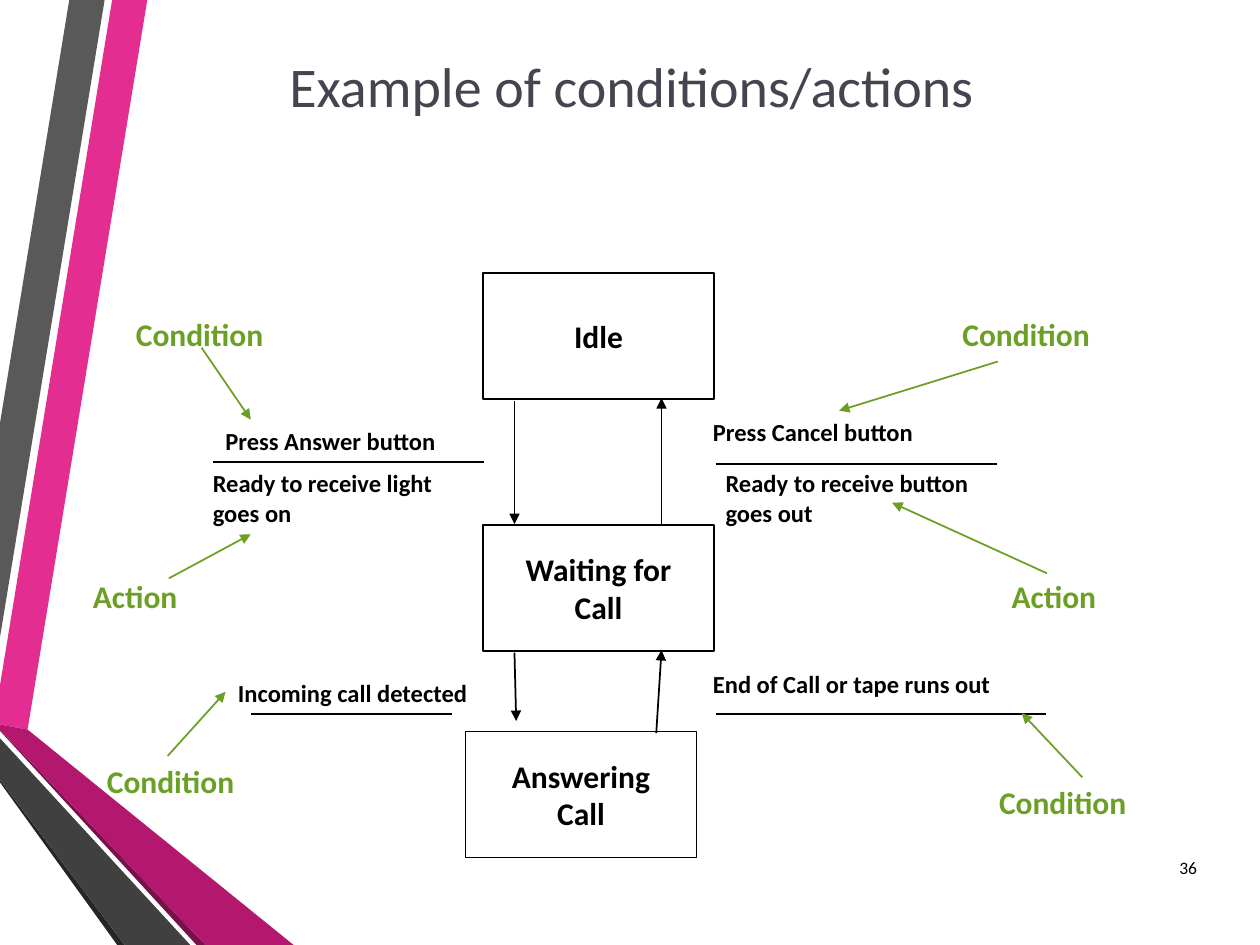
import pptx
import pptx.dml.color
import pptx.enum.shapes
import pptx.enum.text
import pptx.oxml
import pptx.oxml.ns
import pptx.util
from dataclasses import dataclass

Pt = pptx.util.Pt
ALIGN = pptx.enum.text.PP_ALIGN
ANCHOR = pptx.enum.text.MSO_ANCHOR
AUTO_SIZE = pptx.enum.text.MSO_AUTO_SIZE


@dataclass(frozen=True)
class Theme:
    font: str = "Calibri"
    ink: str = "000000"
    paper: str = "FFFFFF"
    heading: str = "454551"
    accent: str = "6B9F25"
    pink: str = "E32D91"
    pink_dark: str = "B4186E"
    pink_shade: str = "781049"
    grey: str = "595959"
    grey_dark: str = "404040"
    grey_shade: str = "262626"
    title_size: int = 32
    label_size: int = 18
    event_size: int = 14
    number_size: int = 10
    line_width: int = 1


THEME = Theme()


def rgb(color):
    return pptx.dml.color.RGBColor.from_string(color)


def write(frame, text, size, color, bold=False, align=ALIGN.LEFT, **frame_format):
    """Fill a text frame, one paragraph per line of text."""
    for name, value in frame_format.items():
        setattr(frame, name, value)
    frame.text = text
    for paragraph in frame.paragraphs:
        paragraph.alignment = align
        font_format = {"name": THEME.font, "size": Pt(size), "bold": bold}
        for name, value in font_format.items():
            setattr(paragraph.font, name, value)
        paragraph.font.color.rgb = rgb(color)


def add_label(slide, box, text, size, color):
    label = slide.shapes.add_textbox(*map(Pt, box))
    write(label.text_frame, text, size, color, bold=True,
          word_wrap=False, auto_size=AUTO_SIZE.SHAPE_TO_FIT_TEXT)


def add_line(slide, start, end, color, arrow=False):
    line = slide.shapes.add_connector(
        pptx.enum.shapes.MSO_CONNECTOR.STRAIGHT, *map(Pt, start + end))
    line.line.color.rgb = rgb(color)
    line.line.width = Pt(THEME.line_width)
    if arrow:
        head = pptx.oxml.parse_xml(
            "<a:tailEnd %s type='triangle'/>" % pptx.oxml.ns.nsdecls("a"))
        line.line._get_or_add_ln().append(head)
    effects = pptx.oxml.parse_xml("<a:effectLst %s/>" % pptx.oxml.ns.nsdecls("a"))
    line._element.spPr.append(effects)


def add_ribbons(slide, left, top):
    """Folded pink and grey ribbons along the left edge."""
    ribbons = [
        (THEME.pink, [(0, 391.7), (0, 414), (15.8, 416.9), (84.2, 0), (64.1, 0)]),
        (THEME.grey, [(59.8, 0), (39.6, 0), (0, 241.9), (0, 364.3)]),
        (THEME.grey_shade, [(0, 445.7), (0, 447.1), (67, 540), (71.3, 540)]),
        (THEME.pink_shade, [(0, 416.9), (0, 417.6), (112.3, 540), (117.4, 540)]),
        (THEME.pink_dark, [(0, 416.9), (117.4, 540), (167.8, 540),
                           (15.8, 416.9), (0, 414)]),
        (THEME.grey_dark, [(0, 445.7), (71.3, 540), (108.7, 540), (0, 421.9)]),
    ]
    group = slide.shapes.add_group_shape()
    for color, corners in ribbons:
        points = [(Pt(left + x), Pt(top + y)) for x, y in corners]
        builder = group.shapes.build_freeform(*points[0])
        builder.add_line_segments(points[1:], close=True)
        ribbon = builder.convert_to_shape()
        ribbon.shadow.inherit = False
        ribbon.fill.solid()
        ribbon.fill.fore_color.rgb = rgb(color)
        ribbon.line.fill.background()


def add_title(slide, left, top, width, height):
    title = slide.shapes.title
    place = {"left": left, "top": top, "width": width, "height": height}
    for name, value in place.items():
        setattr(title, name, Pt(value))
    write(title.text_frame, "Example of conditions/actions", THEME.title_size,
          THEME.heading, align=ALIGN.CENTER, vertical_anchor=ANCHOR.MIDDLE)
    title.text_frame.paragraphs[0].line_spacing = 0.9


def add_page_number(slide, left, top, width, height):
    number = slide.shapes.add_textbox(*map(Pt, (left, top, width, height)))
    write(number.text_frame, "36", THEME.number_size, THEME.ink, align=ALIGN.RIGHT,
          word_wrap=True, vertical_anchor=ANCHOR.MIDDLE,
          margin_left=0, margin_right=0, margin_top=0, margin_bottom=0)


def add_states(slide, left, top):
    """Column of states joined by transitions."""
    states = [("Idle", 10, 0), ("Waiting for\nCall", 10, 144),
              ("Answering\nCall", 0, 262)]
    transitions = [((28, 73), (28, 143.5)), ((112, 144), (112, 71.5)),
                   ((28, 217), (29, 256)), ((109, 263), (112, 215.5))]
    for name, x, y in states:
        state = slide.shapes.add_shape(
            pptx.enum.shapes.MSO_SHAPE.RECTANGLE,
            *map(Pt, (left + x, top + y, 132, 72)))
        state.shadow.inherit = False
        state.fill.solid()
        state.fill.fore_color.rgb = rgb(THEME.paper)
        state.line.color.rgb = rgb(THEME.ink)
        state.line.width = Pt(THEME.line_width)
        write(state.text_frame, name, THEME.label_size, THEME.ink, bold=True,
              align=ALIGN.CENTER, word_wrap=False, vertical_anchor=ANCHOR.MIDDLE)
    for (x1, y1), (x2, y2) in transitions:
        add_line(slide, (left + x1, top + y1), (left + x2, top + y2),
                 THEME.ink, arrow=True)


def add_side(slide, left, top, events, rules, roles, pointers):
    """Events over and under their rules, with the role of each pointed out."""
    for text, x, y, width in events:
        height = 41 if "\n" in text else 24
        add_label(slide, (left + x, top + y, width, height), text,
                  THEME.event_size, THEME.ink)
    for x1, x2, y in rules:
        add_line(slide, (left + x1, top + y), (left + x2, top + y), THEME.ink)
    role_widths = {"Condition": 91.4, "Action": 66.2}
    for role, x, y in roles:
        add_label(slide, (left + x, top + y, role_widths[role], 28.8), role,
                  THEME.label_size, THEME.accent)
    for x1, y1, x2, y2 in pointers:
        add_line(slide, (left + x1, top + y1), (left + x2, top + y2),
                 THEME.accent, arrow=True)


def main():
    deck = pptx.Presentation()
    deck.slide_width, deck.slide_height = Pt(720), Pt(540)
    slide = deck.slides.add_slide(deck.slide_layouts.get_by_name("Title Only"))

    add_ribbons(slide, 0, 0)
    add_title(slide, 79, 6, 564, 90)
    add_page_number(slide, 650, 481, 34, 29)
    add_states(slide, 266, 156)
    # Transitions on the left lead down, those on the right lead back up
    add_side(
        slide, 46, 176,
        events=[("Press Answer button", 75.7, 63.8, 139.7),
                ("Ready to receive light\ngoes on", 68.5, 88.2, 145.4),
                ("Incoming call detected", 82.9, 207.8, 151.9)],
        rules=[(75.7, 230.5, 88.2), (97.3, 212.5, 232.2)],
        roles=[("Condition", 24.6, 0.4), ("Action", 0, 150.2), ("Condition", 8, 256)],
        pointers=[(69.2, 22.7, 97.3, 63.8), (50.5, 154.5, 97.3, 129.3),
                  (49.8, 256, 82.9, 219.3)])
    add_side(
        slide, 400, 176,
        events=[("Press Cancel button", 0.3, 58.7, 133.9),
                ("Ready to receive button\ngoes out", 7.5, 88.2, 162),
                ("End of Call or tape runs out", 0.3, 202.7, 177.8)],
        rules=[(9, 169.5, 89), (9, 197.6, 232.2)],
        roles=[("Condition", 142.9, 0.4), ("Action", 171, 150.2),
               ("Condition", 163.8, 268.2)],
        pointers=[(170.2, 30.6, 79.5, 58.7), (198.3, 151.6, 109.8, 111.3),
                  (218.5, 268.2, 183.9, 231.5)])
    deck.save("out.pptx")


if __name__ == "__main__":
    main()
